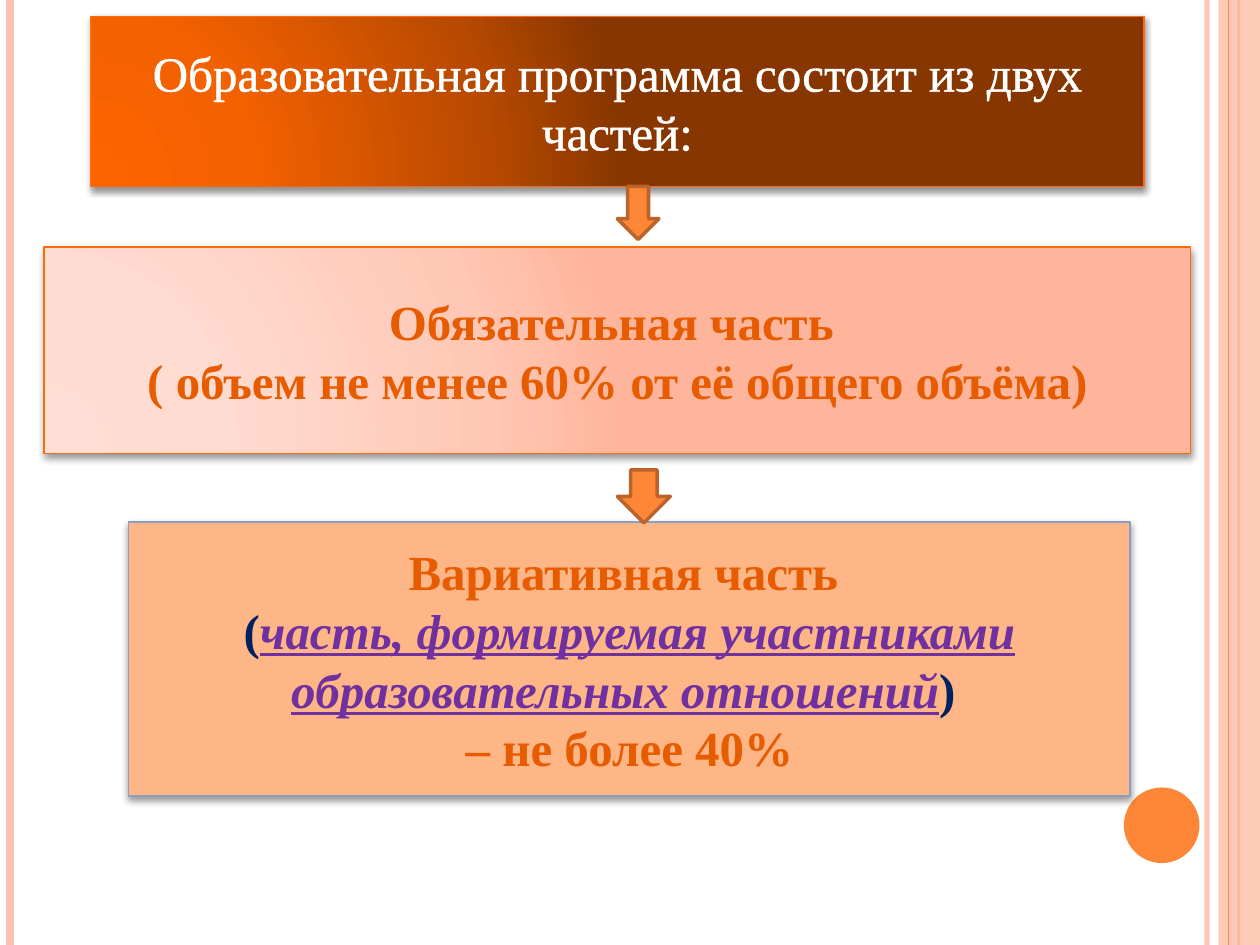
from dataclasses import dataclass

from lxml.etree import SubElement
from pptx import Presentation
from pptx.dml.color import RGBColor
from pptx.enum.shapes import MSO_CONNECTOR, MSO_SHAPE
from pptx.enum.text import MSO_ANCHOR, MSO_AUTO_SIZE, PP_ALIGN
from pptx.oxml.ns import qn
from pptx.util import Inches, Pt


@dataclass(frozen=True)
class Theme:
    font: str = "Times New Roman"
    size: int = 28
    white: str = "FFFFFF"
    orange: str = "FE8637"
    rust: str = "BC6329"
    pink: str = "FEC3AE"
    peach: str = "FEB687"
    border: str = "FF6B0A"
    steel: str = "8D9CBF"
    text: str = "E75C01"
    navy: str = "002060"
    violet: str = "7030A0"
    dark: tuple = ("FD6400", "F46100", "B74900", "873600")
    light: tuple = ("FFDED5", "FFDBD0", "FFC8B6", "FFB59B")
    stops: tuple = (0, 30, 75, 100)


def add(parent, tag, **attrs):
    return SubElement(parent, qn(tag), {k: str(v) for k, v in attrs.items()})


def tint(parent, color, alpha=100):
    """Append an RGB colour with its opacity in percent."""
    node = add(parent, "a:srgbClr", val=color)
    if alpha < 100:
        add(node, "a:alpha", val=alpha * 1000)


def fade(node, alpha):
    """Make every colour under an element partly transparent."""
    for color in node.iter(qn("a:srgbClr")):
        add(color, "a:alpha", val=alpha * 1000)


class Deck:
    def __init__(self, theme):
        self.theme = theme
        self.prs = Presentation()
        self.prs.slide_width, self.prs.slide_height = Inches(10), Inches(7.5)
        self.slide = self.prs.slides.add_slide(self.prs.slide_layouts[5])

    def rule(self, x, color, width, alpha=100):
        """Draw a vertical line over the full slide height."""
        line = self.slide.shapes.add_connector(
            MSO_CONNECTOR.STRAIGHT, Inches(x), 0, Inches(x), Inches(7.5))
        line.line.color.rgb = RGBColor.from_string(color)
        line.line.width = Pt(width)
        props = line._element.spPr
        if alpha < 100:
            fade(props, alpha)
        add(props, "a:effectLst")

    def shape(self, kind, box, fill, line=None, width=1):
        item = self.slide.shapes.add_shape(kind, *map(Inches, box))
        self.paint(item, fill, line, width)
        return item

    def paint(self, item, fill, line=None, width=1):
        """Fill with one colour, or a radial gradient if given several."""
        if isinstance(fill, str):
            item.fill.solid()
            item.fill.fore_color.rgb = RGBColor.from_string(fill)
        else:
            item.fill.gradient()
            grad = item._element.spPr.find(qn("a:gradFill"))
            grad.clear()
            grad.set("rotWithShape", "1")
            stops = add(grad, "a:gsLst")
            for pos, color in zip(self.theme.stops, fill):
                tint(add(stops, "a:gs", pos=pos * 1000), color)
            ring = add(grad, "a:path", path="circle")
            add(ring, "a:fillToRect", l=5000, t=100000, r=120000, b=10000)
        if line:
            item.line.color.rgb = RGBColor.from_string(line)
            item.line.width = Pt(width)
        else:
            item.line.fill.background()
        item.shadow.inherit = False

    def shade(self, item, alpha=40, dist=2):
        """Add a soft shadow below a shape."""
        effects = item._element.spPr.find(qn("a:effectLst"))
        cast = add(effects, "a:outerShdw", blurRad=Pt(4), dist=Pt(dist),
                   dir=5400000, rotWithShape=0)
        tint(cast, "000000", alpha)

    def label(self, item, lines):
        """Fill a shape with paragraphs, each a list of (text, colour, format)."""
        frame = item.text_frame
        setup = {"word_wrap": True, "auto_size": MSO_AUTO_SIZE.NONE,
                 "vertical_anchor": MSO_ANCHOR.MIDDLE}
        for name, value in setup.items():
            setattr(frame, name, value)
        for i, parts in enumerate(lines):
            para = frame.add_paragraph() if i else frame.paragraphs[0]
            para.alignment = PP_ALIGN.CENTER
            for text, color, extra in parts:
                run = para.add_run()
                run.text = text
                look = {"name": self.theme.font, "size": Pt(self.theme.size),
                        "bold": True, **extra}
                for name, value in look.items():
                    setattr(run.font, name, value)
                run.font.color.rgb = RGBColor.from_string(color)

    def title(self, text, box):
        item = self.slide.shapes.title
        sides = ("left", "top", "width", "height")
        for name, value in zip(sides, box):
            setattr(item, name, Inches(value))
        self.paint(item, self.theme.dark, self.theme.border)
        self.shade(item, 42, 1.6)
        self.label(item, [[(text, self.theme.white, {"bold": False})]])
        props = item.text_frame.paragraphs[0].runs[0].font._element
        edge = add(props, "a:ln", w=Pt(1.45))
        tint(add(edge, "a:solidFill"), self.theme.white)
        props.insert(0, edge)

    def panel(self, box, fill, line, lines):
        item = self.shape(MSO_SHAPE.RECTANGLE, box, fill, line)
        self.shade(item)
        self.label(item, lines)

    def arrow(self, box):
        self.shape(MSO_SHAPE.DOWN_ARROW, box, self.theme.orange,
                   self.theme.rust, 2)


def main():
    look = Theme()
    deck = Deck(look)

    deck.rule(9.58, look.pink, 3, 93)
    deck.rule(0.08, look.pink, 4.5)
    deck.rule(9.83, look.orange, 1.5)
    band = deck.shape(MSO_SHAPE.RECTANGLE, (9.67, 0, 0.33, 7.5), look.pink)
    fade(band._element.spPr, 87)
    deck.rule(9.75, look.orange, 0.75)
    deck.shape(MSO_SHAPE.OVAL, (8.92, 6.25, 0.6, 0.6), look.orange)

    deck.title("Образовательная программа состоит из двух частей:",
               (0.72, 0.13, 8.36, 1.35))
    deck.panel((0.35, 1.96, 9.1, 1.64), look.light, look.border, [
        [("Обязательная часть ", look.text, {})],
        [("( объем не менее 60% от её общего объёма)", look.text, {})],
    ])
    deck.panel((1.02, 4.14, 7.95, 2.18), look.peach, look.steel, [
        [("Вариативная часть ", look.text, {})],
        [("(", look.navy, {}),
         ("часть, формируемая участниками образовательных отношений",
          look.violet, {"italic": True, "underline": True}),
         (") ", look.navy, {})],
        [("– не более 40%", look.text, {})],
    ])
    deck.arrow((4.9, 1.48, 0.33, 0.42))
    deck.arrow((4.9, 3.73, 0.42, 0.42))

    deck.prs.save("out.pptx")


if __name__ == "__main__":
    main()
